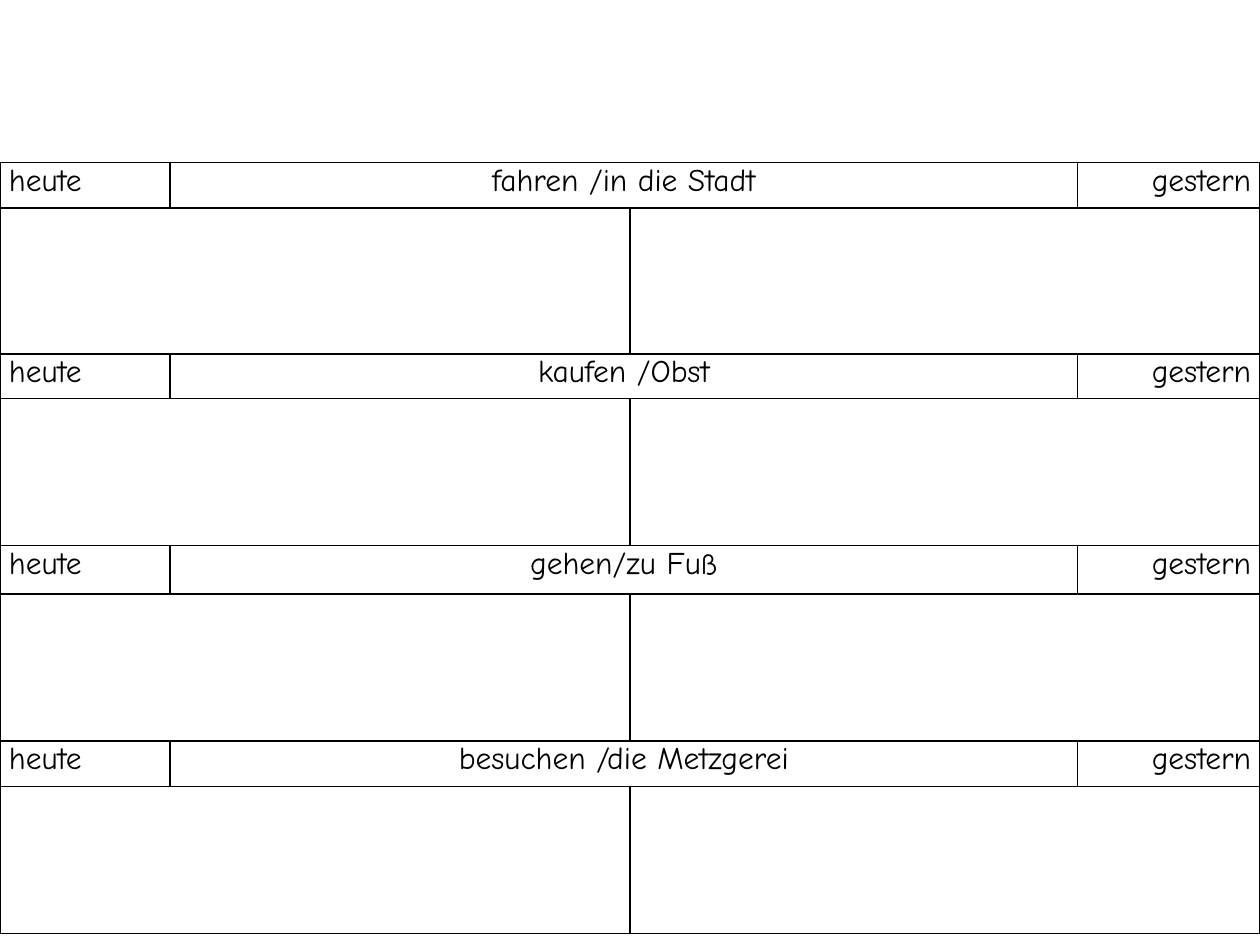
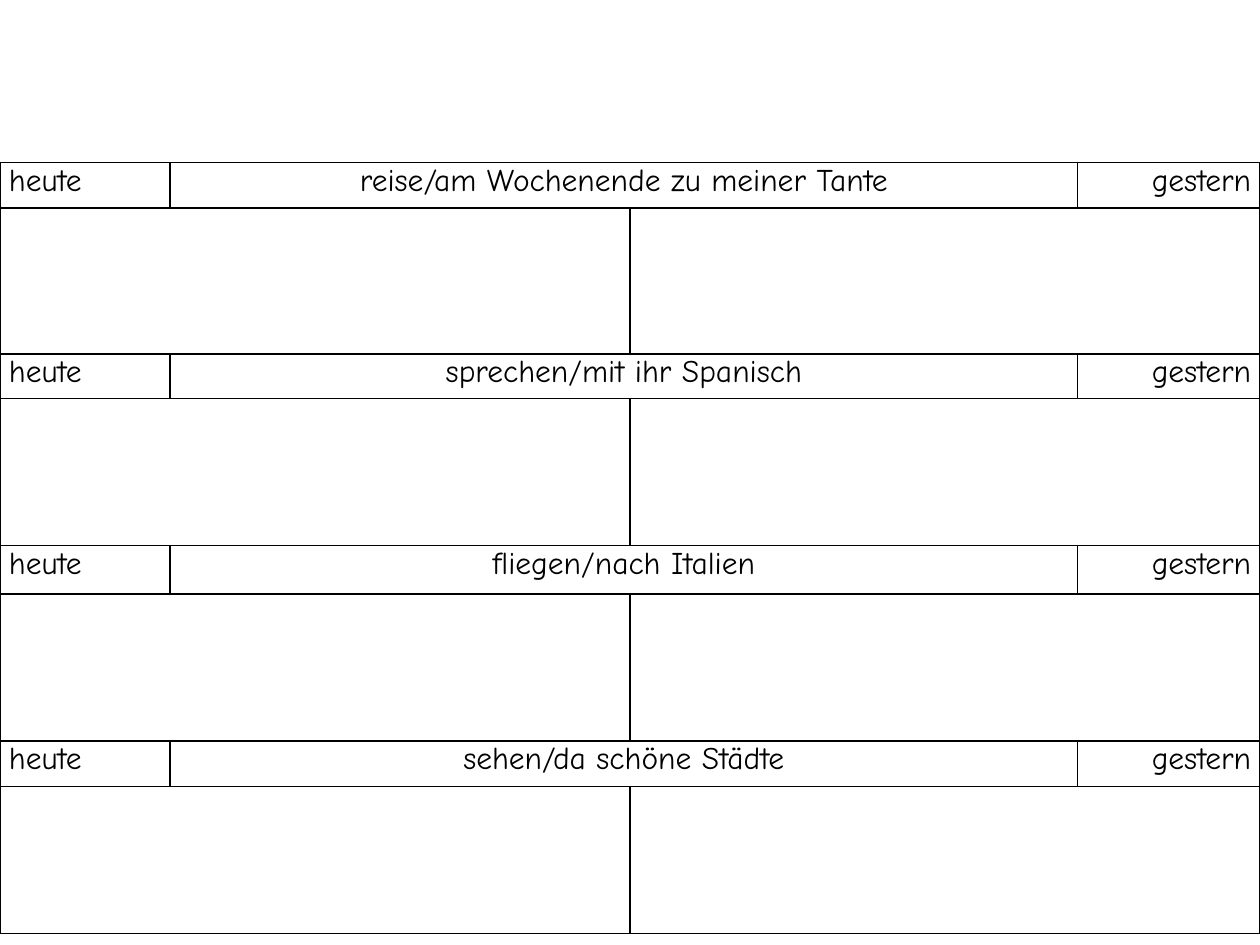
from pptx import Presentation
from pptx.dml.color import RGBColor
from pptx.enum import text
from pptx.oxml import parse_xml
from pptx.oxml import ns
from pptx.util import Cm, Pt

BLACK = RGBColor(0, 0, 0)
FONT = "Comic Neue"
TABLE_BOX = (Cm(0), Cm(3.28), Cm(25.4), Cm(15.54))
COLUMN_WIDTHS = (3.43, 9.27, 9.02, 3.68)
ROW_HEIGHTS = (0.91, 2.95, 0.89, 2.97, 0.97, 2.97, 0.91, 2.97)
SIDE_MARGIN = Cm(0.18)
PROMPTS_BY_PAGE = (
    ("fahren /in die Stadt", "kaufen /Obst", "gehen/zu Fuß", "besuchen /die Metzgerei"),
    (
        "reise/am Wochenende zu meiner Tante",
        "sprechen/mit ihr Spanisch",
        "fliegen/nach Italien",
        "sehen/da schöne Städte",
    ),
)


def add_borders(cell):
    """Draw a thin black line on all four sides of a cell."""
    properties = cell._tc.get_or_add_tcPr()
    for index, side in enumerate("LRTB"):
        line = parse_xml(
            f'<a:ln{side} {ns.nsdecls("a")} w="{Pt(1)}"><a:solidFill>'
            f'<a:srgbClr val="{BLACK}"/></a:solidFill></a:ln{side}>'
        )
        properties.insert(index, line)


def style_cell(cell):
    """Give a cell its margins, font, clear fill and borders."""
    cell.margin_left = cell.margin_right = SIDE_MARGIN
    cell.margin_top = cell.margin_bottom = 0
    font = cell.text_frame.paragraphs[0].font
    font.name, font.size, font.color.rgb = FONT, Pt(18), BLACK
    cell.fill.background()
    add_borders(cell)


def write_cell(cell, words, alignment):
    """Put aligned words in a cell."""
    para = cell.text_frame.paragraphs[0]
    para.add_run().text = words
    para.alignment = alignment


def fill_exercise(table, row, prompt):
    """Fill a heading row and join the two answer cells below it."""
    align = text.PP_ALIGN
    table.cell(row, 1).merge(table.cell(row, 2))
    for column in (0, 2):
        table.cell(row + 1, column).merge(table.cell(row + 1, column + 1))
    write_cell(table.cell(row, 0), "heute", align.LEFT)
    write_cell(table.cell(row, 1), prompt, align.CENTER)
    write_cell(table.cell(row, 3), "gestern", align.RIGHT)


def add_worksheet(page, box, prompts):
    """Add the table of exercises in the given box."""
    table = page.shapes.add_table(len(ROW_HEIGHTS), len(COLUMN_WIDTHS), *box).table
    table.first_row = table.horz_banding = False
    for column, width in zip(table.columns, COLUMN_WIDTHS):
        column.width = Cm(width)
    for row, height in zip(table.rows, ROW_HEIGHTS):
        row.height = Cm(height)
    for cell in table.iter_cells():
        style_cell(cell)
    for index, prompt in enumerate(prompts):
        fill_exercise(table, 2 * index, prompt)


def main():
    """Build and save the deck."""
    deck = Presentation()
    deck.slide_width, deck.slide_height = Cm(25.4), Cm(19.05)
    for prompts in PROMPTS_BY_PAGE:
        page = deck.slides.add_slide(deck.slide_layouts[6])
        add_worksheet(page, TABLE_BOX, prompts)
    deck.save("out.pptx")


if __name__ == "__main__":
    main()
